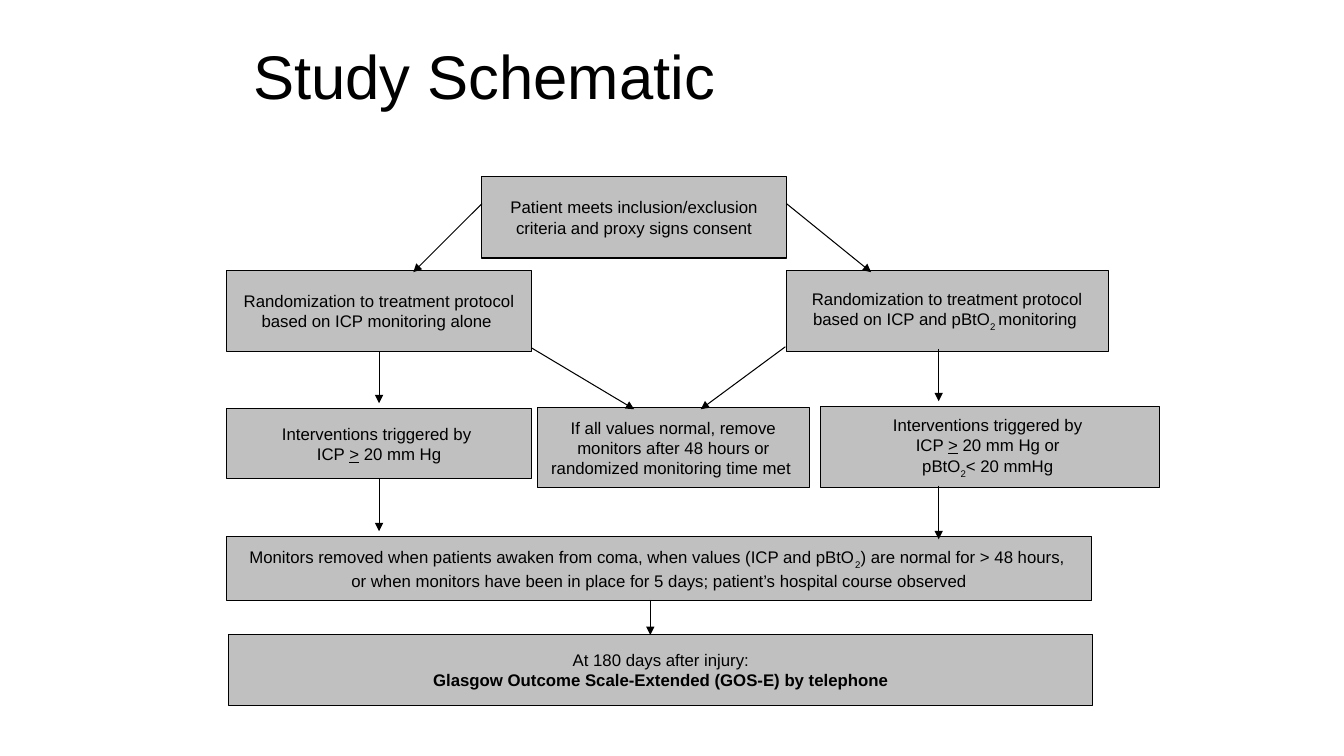
from dataclasses import dataclass

from lxml.etree import SubElement
from pptx import Presentation
from pptx.dml.color import RGBColor
from pptx.enum.shapes import MSO_CONNECTOR, MSO_SHAPE
from pptx.enum.text import MSO_ANCHOR, MSO_AUTO_SIZE, PP_ALIGN
from pptx.oxml.ns import qn
from pptx.shapes.autoshape import Shape
from pptx.slide import Slide
from pptx.text.text import Font
from pptx.util import Inches, Pt

BLACK = RGBColor(0x00, 0x00, 0x00)
GREY = RGBColor(0xC0, 0xC0, 0xC0)

TITLE_FORMAT = {"name": "Arial", "size": Pt(44)}
BOX_FORMAT = {"name": "Arial", "size": Pt(12)}
FRAME_FORMAT = {
    "word_wrap": True,
    "auto_size": MSO_AUTO_SIZE.NONE,
    "vertical_anchor": MSO_ANCHOR.MIDDLE,
}
BOTTOM_SITE = 2


@dataclass(frozen=True)
class Span:
    text: str
    bold: bool = False
    underline: bool = False
    subscript: bool = False


@dataclass(frozen=True)
class Step:
    key: str
    left: float
    top: float
    width: float
    height: float
    paragraphs: tuple[tuple[Span, ...], ...]


@dataclass(frozen=True)
class Arrow:
    start: tuple[float, float]
    end: tuple[float, float]
    source: str = ""


AT_LEAST = Span(">", underline=True)
SUBSCRIPT_TWO = Span("2", subscript=True)
TRIGGERED = (Span("Interventions triggered by "),)

STEPS = (
    Step("icp interventions", 2.25, 4.05, 3.02, 0.7, (
        TRIGGERED,
        (Span("ICP "), AT_LEAST, Span(" 20 mm Hg")),
    )),
    Step("icp arm", 2.25, 2.68, 3.02, 0.81, (
        (Span("Randomization to treatment protocol based on ICP monitoring alone "),),
    )),
    Step("combined arm", 7.8, 2.68, 3.19, 0.81, (
        (
            Span("Randomization to treatment protocol based on ICP and pBtO"),
            Span("2 ", subscript=True),
            Span("monitoring "),
        ),
    )),
    Step("enrolment", 4.78, 1.75, 3.02, 0.81, (
        (Span("Patient meets inclusion/exclusion criteria and proxy signs consent"),),
    )),
    Step("combined interventions", 8.14, 4.03, 3.36, 0.81, (
        TRIGGERED,
        (Span("ICP "), AT_LEAST, Span(" 20 mm Hg or ")),
        (Span("pBtO"), SUBSCRIPT_TWO, Span("< 20 mmHg ")),
    )),
    Step("monitor removal", 2.25, 5.32, 8.58, 0.64, (
        (
            Span("Monitors removed when patients awaken from coma, when values (ICP and pBtO"),
            SUBSCRIPT_TWO,
            Span(") are normal for > 48 hours, "),
        ),
        (Span("or when monitors have been in place for 5 days; patient’s hospital course observed"),),
    )),
    Step("outcome", 2.27, 6.29, 8.57, 0.71, (
        (Span("At 180 days after injury:"),),
        (Span("Glasgow Outcome Scale-Extended (GOS-E) by telephone", bold=True),),
    )),
    Step("normal values", 5.33, 4.04, 2.7, 0.8, (
        (Span("If all values normal, remove monitors after 48 hours or randomized monitoring time met "),),
    )),
)

ARROWS = (
    Arrow((4.78, 2.02), (4.1, 2.7)),
    Arrow((7.8, 2.02), (8.64, 2.7)),
    Arrow((3.76, 3.47), (3.76, 4), "icp arm"),
    Arrow((9.31, 3.46), (9.31, 3.98)),
    Arrow((3.76, 4.75), (3.76, 5.27), "icp interventions"),
    Arrow((9.31, 4.82), (9.31, 5.35)),
    Arrow((6.45, 5.95), (6.45, 6.3)),
    Arrow((7.79, 3.44), (6.95, 4.06)),
    Arrow((5.27, 3.45), (6.29, 4.06)),
)


def apply_format(target: object, values: dict[str, object]) -> None:
    for name, value in values.items():
        setattr(target, name, value)


def style_font(font: Font, values: dict[str, object]) -> None:
    apply_format(font, values)
    font.color.rgb = BLACK


def set_title(page: Slide) -> None:
    title = page.shapes.title
    apply_format(title, {
        "left": Inches(2.41), "top": Inches(0.16),
        "width": Inches(8.5), "height": Inches(1.25),
    })
    apply_format(title.text_frame, FRAME_FORMAT)
    para = title.text_frame.paragraphs[0]
    apply_format(para, {"alignment": PP_ALIGN.LEFT, "line_spacing": 0.9})
    span = para.add_run()
    span.text = "Study Schematic"
    style_font(span.font, TITLE_FORMAT)


def draw_step(page: Slide, step: Step) -> Shape:
    box = page.shapes.add_shape(
        MSO_SHAPE.RECTANGLE,
        Inches(step.left), Inches(step.top), Inches(step.width), Inches(step.height),
    )
    box.shadow.inherit = False
    box.fill.solid()
    box.fill.fore_color.rgb = GREY
    box.line.color.rgb = BLACK
    box.line.width = Pt(0.75)
    frame = box.text_frame
    apply_format(frame, FRAME_FORMAT)
    for index, spans in enumerate(step.paragraphs):
        para = frame.add_paragraph() if index else frame.paragraphs[0]
        para.alignment = PP_ALIGN.CENTER
        for part in spans:
            span = para.add_run()
            span.text = part.text
            style_font(span.font, BOX_FORMAT | {"bold": part.bold, "underline": part.underline})
            if part.subscript:
                span._r.get_or_add_rPr().set("baseline", "-30000")
    return box


def draw_arrow(page: Slide, arrow: Arrow, boxes: dict[str, Shape]) -> None:
    connector = page.shapes.add_connector(
        MSO_CONNECTOR.STRAIGHT, *map(Inches, arrow.start + arrow.end)
    )
    if arrow.source:
        connector.begin_connect(boxes[arrow.source], BOTTOM_SITE)
    connector.line.color.rgb = BLACK
    connector.line.width = Pt(0.75)
    properties = connector._element.spPr
    SubElement(properties.find(qn("a:ln")), qn("a:tailEnd"), type="triangle")
    SubElement(properties, qn("a:effectLst"))


def main() -> None:
    deck = Presentation()
    deck.slide_width = Inches(13.33)
    deck.slide_height = Inches(7.5)
    page = deck.slides.add_slide(deck.slide_layouts[5])
    set_title(page)
    boxes = {step.key: draw_step(page, step) for step in STEPS}
    for arrow in ARROWS:
        draw_arrow(page, arrow, boxes)
    deck.save("out.pptx")


if __name__ == "__main__":
    main()
